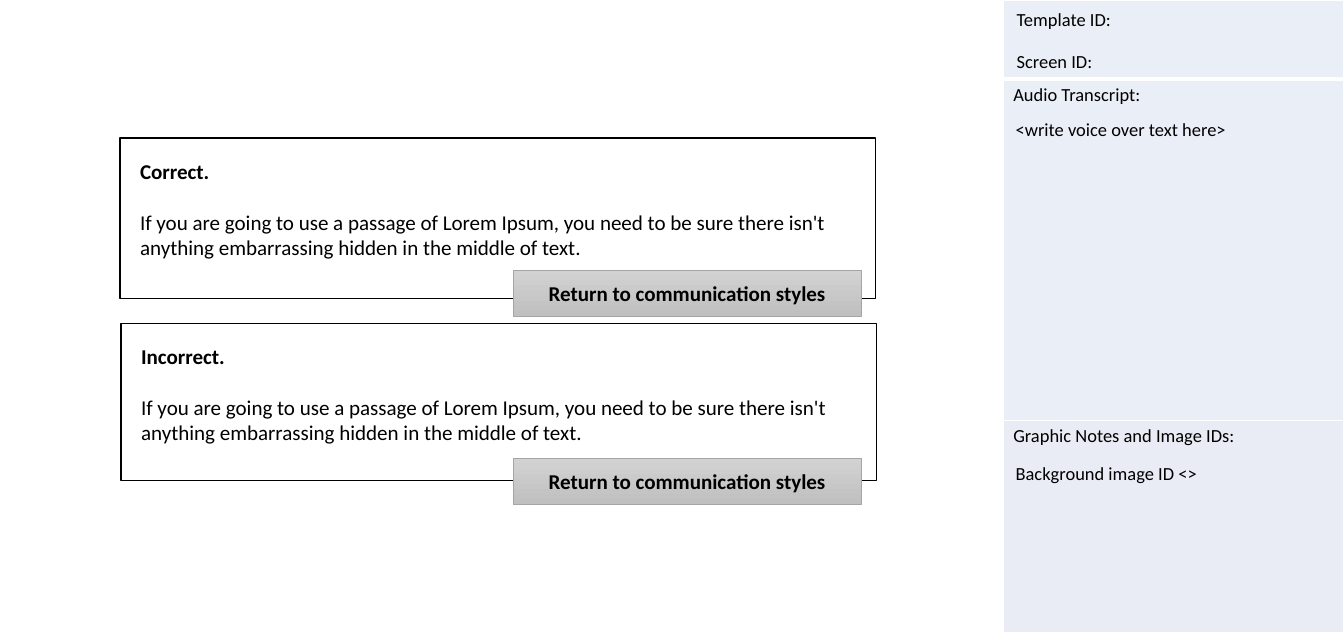
import pptx
import pptx.dml.color
import pptx.enum.shapes
import pptx.enum.text
import pptx.oxml
import pptx.oxml.ns
import pptx.util

EMU_PER_PX = 914400 / 94.8
BLACK, WHITE = "000000", "FFFFFF"
BUTTON_TOP, BUTTON_BOTTOM, BUTTON_EDGE = "D2D2D2", "C0C0C0", "A5A5A5"
SIDEBAR_BLUE, NOTES_BLUE = "EAEFF7", "E9EBF5"


def px(length):
    return pptx.util.Emu(round(length * EMU_PER_PX))


def rgb(value):
    return pptx.dml.color.RGBColor.from_string(value)


class Storyboard:
    """Holds the text style and the current slide."""

    font_name = "Calibri"
    label_size = 14
    body_size = 16

    def __init__(self, slide):
        self.slide = slide

    def style(self, paragraph, size, bold=False):
        paragraph.font.name = self.font_name
        paragraph.font.size = pptx.util.Pt(size)
        paragraph.font.bold = bold
        paragraph.font.color.rgb = rgb(BLACK)

    def insets(self, frame, across, down):
        frame.margin_left = frame.margin_right = px(across)
        frame.margin_top = frame.margin_bottom = px(down)

    def label(self, left, top, width, text):
        box = self.slide.shapes.add_textbox(px(left), px(top), px(width), px(32))
        frame = box.text_frame
        frame.word_wrap = True
        frame.text = text
        self.style(frame.paragraphs[0], self.label_size)

    def rectangle(self, left, top, width, height, edge, edge_width):
        shape = self.slide.shapes.add_shape(
            pptx.enum.shapes.MSO_SHAPE.RECTANGLE,
            px(left), px(top), px(width), px(height))
        shape.shadow.inherit = False
        shape.line.color.rgb = rgb(edge)
        shape.line.width = pptx.util.Pt(edge_width)
        shape.text_frame.word_wrap = True
        return shape

    def feedback(self, left, top, height, verdict, message):
        panel = self.rectangle(left, top, 755, height, BLACK, 1)
        panel.fill.solid()
        panel.fill.fore_color.rgb = rgb(WHITE)
        frame = panel.text_frame
        frame.vertical_anchor = pptx.enum.text.MSO_ANCHOR.TOP
        self.insets(frame, 20, 20)
        frame.text = f"{verdict}\n{message}"
        heading, body = frame.paragraphs
        for paragraph in (heading, body):
            paragraph.alignment = pptx.enum.text.PP_ALIGN.LEFT
            self.style(paragraph, self.body_size, bold=paragraph is heading)
        body.space_before = pptx.util.Pt(19.5)

    def button(self, top, height, text):
        button = self.rectangle(513, top, 348, height, BUTTON_EDGE, 0.5)
        button.fill.gradient()
        button.fill.gradient_angle = 270
        for stop, color in zip(button.fill.gradient_stops, (BUTTON_TOP, BUTTON_BOTTOM)):
            stop.color.rgb = rgb(color)
        frame = button.text_frame
        frame.vertical_anchor = pptx.enum.text.MSO_ANCHOR.MIDDLE
        self.insets(frame, 0, 5)
        frame.text = text
        frame.paragraphs[0].alignment = pptx.enum.text.PP_ALIGN.CENTER
        self.style(frame.paragraphs[0], self.body_size, bold=True)

    def cell_borders(self, cell, **widths):
        properties = cell._tc.get_or_add_tcPr()
        for side in "LRTB":
            width = pptx.util.Pt(widths.get(side, 1))
            properties.append(pptx.oxml.parse_xml(
                f'<a:ln{side} {pptx.oxml.ns.nsdecls("a")} w="{width}"><a:solidFill>'
                f'<a:srgbClr val="{WHITE}"/></a:solidFill></a:ln{side}>'))

    def sidebar(self, left, top, width, sections):
        total = sum(height for height, *_ in sections)
        table = self.slide.shapes.add_table(
            len(sections), 1, px(left), px(top), px(width), px(total)).table
        table.first_row = table.horz_banding = False
        for index, (height, text, color, borders) in enumerate(sections):
            table.rows[index].height = px(height)
            cell = table.cell(index, 0)
            self.cell_borders(cell, **borders)
            cell.fill.solid()
            cell.fill.fore_color.rgb = rgb(color)
            self.insets(cell, 10, 5)
            if text:
                cell.text = text
                self.style(cell.text_frame.paragraphs[0], self.label_size)


def main():
    deck = pptx.Presentation()
    deck.slide_width, deck.slide_height = pptx.util.Cm(36), pptx.util.Cm(17)
    board = Storyboard(deck.slides.add_slide(deck.slide_layouts[6]))

    # Sidebar for the production notes
    board.sidebar(1003, 0, 340, [
        (79, "", SIDEBAR_BLUE, {"B": 3}),
        (341, "Audio Transcript:", SIDEBAR_BLUE, {"T": 3}),
        (212, "Graphic Notes and Image IDs:", NOTES_BLUE, {}),
    ])
    for left, top, width, text in (
        (1007, 45, 362, "Screen ID:"),
        (1007, 3, 362, "Template ID:"),
        (1006, 113, 337, "<write voice over text here>"),
        (1006, 457, 337, "Background image ID <>"),
    ):
        board.label(left, top, width, text)

    # Feedback panels
    message = ("If you are going to use a passage of Lorem Ipsum, you need to be sure "
               "there isn't anything embarrassing hidden in the middle of text.")
    board.feedback(120, 138, 160, "Correct.", message)
    board.feedback(121, 323, 157, "Incorrect.", message)

    # Return buttons
    for top in (270, 458):
        board.button(top, 46, "Return to communication styles")

    deck.save("out.pptx")


if __name__ == "__main__":
    main()
